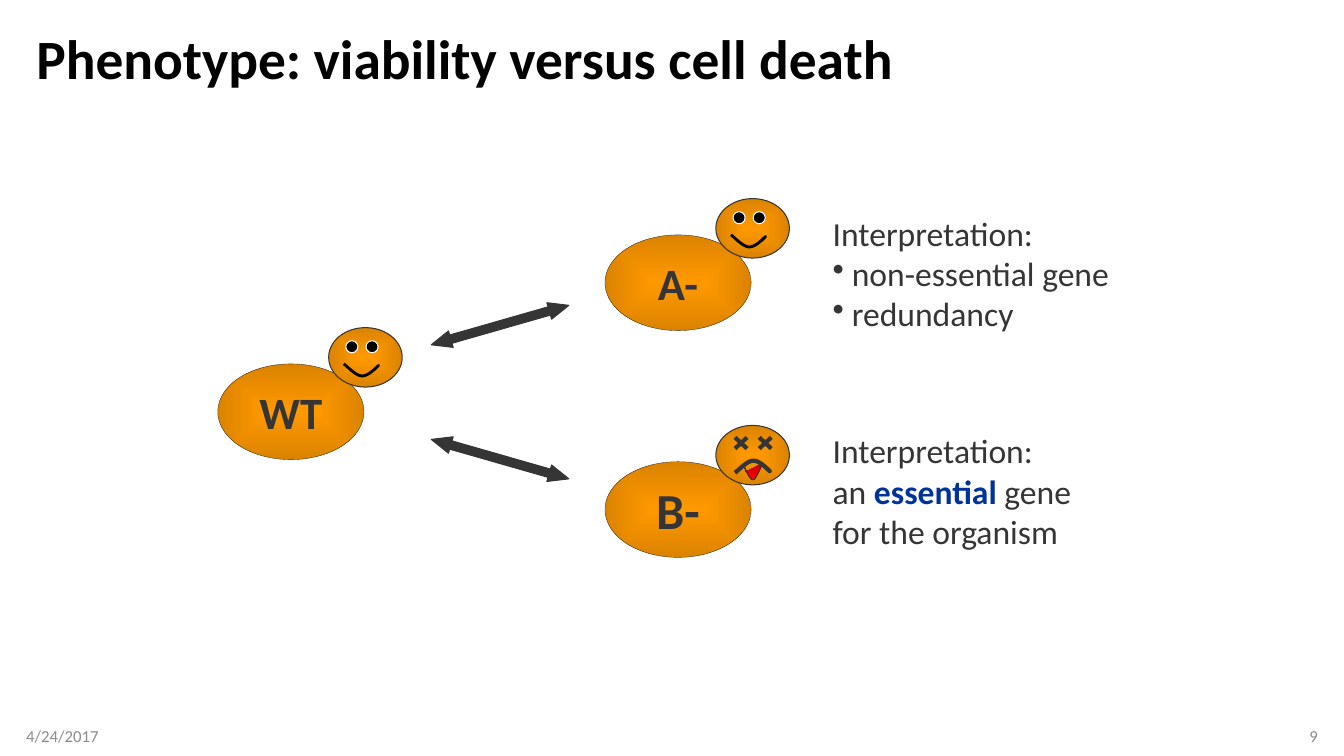
import dataclasses

import lxml.etree
import pptx
import pptx.dml.color
import pptx.enum.shapes
import pptx.enum.text
import pptx.oxml
import pptx.oxml.ns
import pptx.util

PX = 9144
SHAPES = pptx.enum.shapes.MSO_SHAPE
ALIGN = pptx.enum.text.PP_ALIGN
NAMESPACE = pptx.oxml.ns.nsdecls("a")


@dataclasses.dataclass(frozen=True)
class Theme:
    font: str = "Calibri"
    ink: str = "353535"
    black: str = "000000"
    white: str = "FFFFFF"
    muted: str = "8C8C8C"
    accent: str = "003399"
    orange: str = "FF9900"
    orange_edge: str = "DB8300"
    tongue: str = "FF0000"
    tongue_edge: str = "C10000"
    title_size: float = 39.6
    text_size: int = 24
    footer_size: int = 12


THEME = Theme()


def px(*lengths):
    return [pptx.util.Emu(length * PX) for length in lengths]


def rgb(colour):
    return pptx.dml.color.RGBColor.from_string(colour)


def style_span(span, size, colour, bold=False):
    span.font.name = THEME.font
    span.font.size = pptx.util.Pt(size)
    span.font.color.rgb = rgb(colour)
    span.font.bold = bold


def style_line(shape, colour, width):
    shape.line.color.rgb = rgb(colour)
    shape.line.width = pptx.util.Pt(width)


def fill_radial(shape, centre, edge):
    shape.fill.gradient()
    stops = shape.fill.gradient_stops
    for stop, colour, position in zip(stops, (centre, edge), (0, 1)):
        stop.color.rgb = rgb(colour)
        stop.position = position
    gradient = shape.fill._xPr.find(pptx.oxml.ns.qn("a:gradFill"))
    gradient.replace(
        gradient.find(pptx.oxml.ns.qn("a:lin")),
        pptx.oxml.parse_xml(
            f'<a:path {NAMESPACE} path="shape">'
            '<a:fillToRect l="50000" t="50000" r="50000" b="50000"/></a:path>'
        ),
    )


def fill_vertical(shape, top, bottom):
    shape.fill.gradient()
    shape.fill.gradient_angle = 270
    for stop, colour in zip(shape.fill.gradient_stops, (top, bottom)):
        stop.color.rgb = rgb(colour)


def add_ellipse(group, left, top, width, height, line, line_width):
    ellipse = group.shapes.add_shape(SHAPES.OVAL, *px(left, top, width, height))
    ellipse.shadow.inherit = False
    style_line(ellipse, line, line_width)
    return ellipse


def add_curve(group, left, top, start, segments, line, line_width):
    points = []
    for first, second, end in segments:
        for step in range(1, 13):
            t = step / 12
            weights = ((1 - t) ** 3, 3 * t * (1 - t) ** 2, 3 * t * t * (1 - t), t**3)
            points.append(tuple(
                PX * (origin + sum(w * value for w, value in zip(weights, values)))
                for origin, values in zip((left, top), zip(start, first, second, end))
            ))
        start = end
    origin, *_ = [(PX * (left + x), PX * (top + y)) for x, y in [first_point(segments)]]
    return build_curve(group, origin, points, line, line_width)


def first_point(segments):
    return segments[0][0]


def build_curve(group, origin, points, line, line_width):
    builder = group.shapes.build_freeform(*origin, scale=1.0)
    builder.add_line_segments(points, close=False)
    curve = builder.convert_to_shape()
    curve.shadow.inherit = False
    curve.fill.background()
    style_line(curve, line, line_width)
    return curve


def add_mouth(group, left, top, direction, line, line_width):
    segments = [
        ((30, 6 * direction), (24, 12 * direction), (18, 12 * direction)),
        ((12, 12 * direction), (3, 2 * direction), (0, 0)),
    ]
    add_curve(group, left, top, (36, 0), segments, line, line_width)


def add_happy_face(group, left, top):
    for offset in (17, 37):
        eye = add_ellipse(group, left + offset, top + 13, 12, 12, THEME.white, 0.75)
        eye.fill.solid()
        eye.fill.fore_color.rgb = rgb(THEME.black)
    add_mouth(group, left + 15, top + 36, 1, THEME.black, 2)


def add_stroke(group, start_x, start_y, end_x, end_y):
    stroke = group.shapes.add_connector(
        pptx.enum.shapes.MSO_CONNECTOR.STRAIGHT, *px(start_x, start_y, end_x, end_y)
    )
    style_line(stroke, THEME.ink, 3)
    lxml.etree.SubElement(stroke._element.spPr, pptx.oxml.ns.qn("a:effectLst"))


def add_dead_face(group, left, top):
    upper, lower = top + 12, top + 23
    for offset in (19, 43):
        near, far = left + offset, left + offset + 12
        add_stroke(group, near, upper, far, lower)
        add_stroke(group, near, lower, far, upper)
    tongue_segments = [((3, 9), (7, 17), (10, 17)), ((13, 17), (18, 3), (20, 0))]
    tongue = add_curve(
        group, left + 27, top + 37, (0, 0), tongue_segments, THEME.ink, 0.75
    )
    fill_vertical(tongue, THEME.tongue_edge, THEME.tongue)
    add_mouth(group, left + 19, top + 47, -1, THEME.ink, 3)


def add_cell(page, left, top, label, size, add_face):
    group = page.shapes.add_group_shape()
    body = add_ellipse(group, left, top, 145, 95, THEME.ink, 0.25)
    fill_radial(body, THEME.orange, THEME.orange_edge)
    frame = body.text_frame
    frame.text = label
    frame.word_wrap = False
    frame.vertical_anchor = pptx.enum.text.MSO_ANCHOR.MIDDLE
    frame.paragraphs[0].alignment = ALIGN.CENTER
    style_span(frame.paragraphs[0].runs[0], size, THEME.ink, True)
    head_left, head_top = left + 110, top - 36
    head = add_ellipse(group, head_left, head_top, 73, 59, THEME.ink, 0.75)
    fill_radial(head, THEME.orange, THEME.orange_edge)
    add_face(group, head_left, head_top)


def add_double_arrow(page, left, top, angle):
    arrow = page.shapes.add_shape(SHAPES.LEFT_RIGHT_ARROW, *px(left, top, 142, 17))
    arrow.shadow.inherit = False
    arrow.adjustments[0] = 0.5
    arrow.adjustments[1] = 1.19
    arrow.rotation = angle
    arrow.fill.solid()
    arrow.fill.fore_color.rgb = rgb(THEME.ink)
    style_line(arrow, THEME.ink, 0.75)


def add_bullet(para):
    properties = para._p.get_or_add_pPr()
    properties.set("marL", str(19 * PX))
    properties.set("indent", str(-19 * PX))
    properties.append(pptx.oxml.parse_xml(f'<a:buChar {NAMESPACE} char="•"/>'))


def add_note(page, left, top, width, lines, bullets=False):
    box = page.shapes.add_textbox(*px(left, top, width, 130))
    frame = box.text_frame
    frame.word_wrap = True
    for index, spans in enumerate(lines):
        para = frame.add_paragraph() if index else frame.paragraphs[0]
        if bullets and index:
            add_bullet(para)
        for text, strong in spans:
            span = para.add_run()
            span.text = text
            colour = THEME.accent if strong else THEME.ink
            style_span(span, THEME.text_size, colour, strong)


def add_footer(page, left, text, alignment):
    box = page.shapes.add_textbox(*px(left, 710, 300, 40))
    frame = box.text_frame
    frame.text = text
    frame.word_wrap = True
    frame.vertical_anchor = pptx.enum.text.MSO_ANCHOR.MIDDLE
    frame.margin_left = frame.margin_right = 0
    frame.paragraphs[0].alignment = alignment
    style_span(frame.paragraphs[0].runs[0], THEME.footer_size, THEME.muted)


def set_title(page, text):
    title = page.shapes.title
    title.left, title.top, title.width, title.height = px(26, 25, 1281, 72)
    frame = title.text_frame
    frame.text = text
    frame.auto_size = pptx.enum.text.MSO_AUTO_SIZE.NONE
    frame.vertical_anchor = pptx.enum.text.MSO_ANCHOR.MIDDLE
    para = frame.paragraphs[0]
    para.alignment = ALIGN.LEFT
    para.line_spacing = 0.9
    style_span(para.runs[0], THEME.title_size, THEME.black, True)


def main():
    deck = pptx.Presentation()
    deck.slide_width, deck.slide_height = px(1333, 750)
    page = deck.slides.add_slide(deck.slide_layouts[5])
    set_title(page, "Phenotype: viability versus cell death")
    add_footer(page, 26, "4/24/2017", ALIGN.LEFT)
    add_footer(page, 1007, "9", ALIGN.RIGHT)
    add_cell(page, 216, 361, "WT", 32, add_happy_face)
    add_cell(page, 600, 458, "B-", 36, add_dead_face)
    add_cell(page, 600, 233, "A-", 32, add_happy_face)
    add_double_arrow(page, 425, 314, 344)
    add_double_arrow(page, 425, 447, 16)
    heading = [("Interpretation:", False)]
    findings = [[("non-essential gene", False)], [("redundancy", False)]]
    add_note(page, 816, 206, 301, [heading, *findings], bullets=True)
    verdict = [("an ", False), ("essential ", True), ("gene for the organism", False)]
    add_note(page, 816, 422, 277, [heading, verdict])
    deck.save("out.pptx")


if __name__ == "__main__":
    main()
